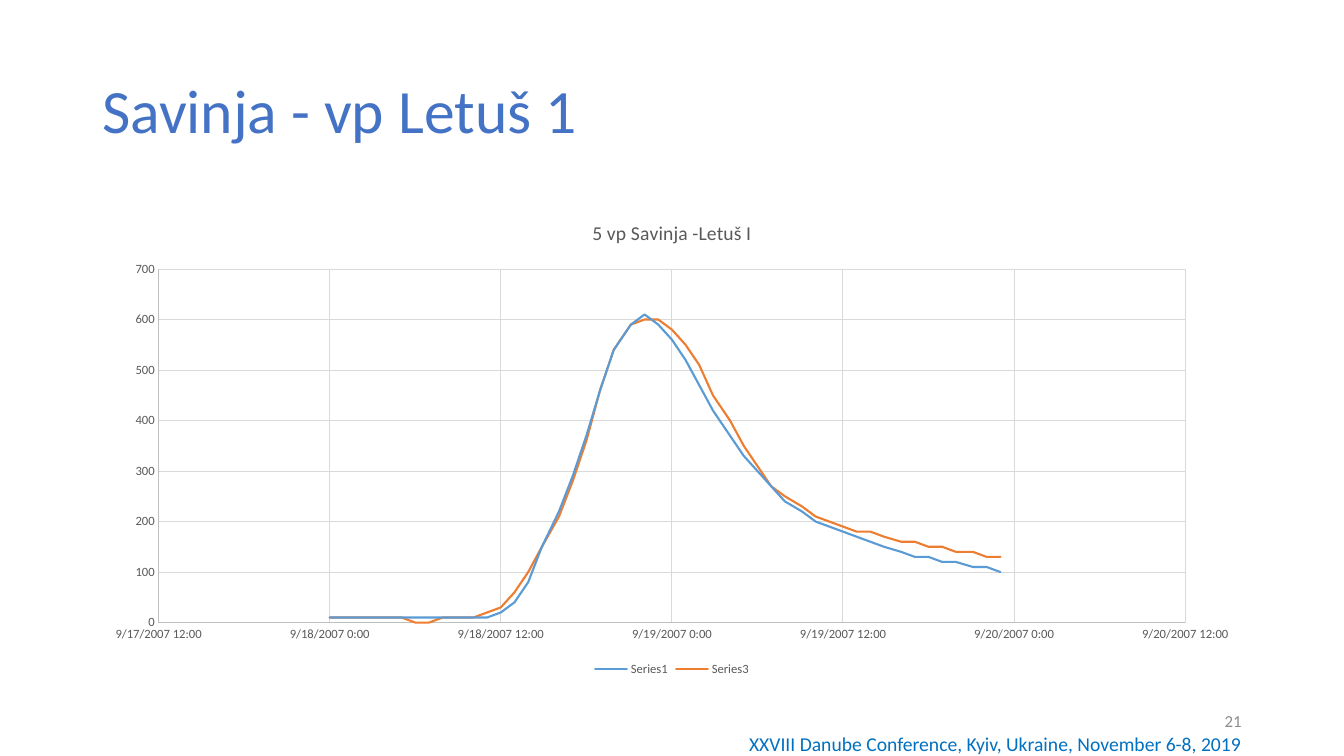
from dataclasses import dataclass

from pptx import Presentation
from pptx.chart.data import XyChartData
from pptx.dml.color import RGBColor
from pptx.enum.chart import XL_CHART_TYPE, XL_LEGEND_POSITION, XL_TICK_MARK
from pptx.enum.text import MSO_ANCHOR, PP_ALIGN
from pptx.util import Pt

LINES = XL_CHART_TYPE.XY_SCATTER_LINES_NO_MARKERS
LEGEND_BOTTOM = XL_LEGEND_POSITION.BOTTOM
NO_TICK = XL_TICK_MARK.NONE
MIDDLE, TOP = MSO_ANCHOR.MIDDLE, MSO_ANCHOR.TOP
LEFT, RIGHT = PP_ALIGN.LEFT, PP_ALIGN.RIGHT


@dataclass(frozen=True)
class Theme:
    font: str = "Calibri"
    heading: str = "4472C4"
    page_number: str = "8C8C8C"
    conference: str = "0070C0"
    chart_text: str = "595959"
    axis: str = "BFBFBF"
    grid: str = "D9D9D9"
    flows: tuple = ("5B9BD5", "ED7D31")
    heading_size: int = 44
    conference_size: int = 14
    chart_title_size: int = 14
    page_number_size: int = 12
    label_size: int = 9
    hairline: float = 0.75
    flow_line: float = 1.5


THEME = Theme()
FIRST_HOUR = 39343
AXIS_START, AXIS_END, HALF_DAY = 39342.5, 39345.5, 0.5
FLOWS = {
    "Series1": [10] * 12 + [
        20, 40, 80, 150, 220, 290, 370, 460, 540, 590, 610, 590,
        560, 520, 470, 420, 370, 330, 300, 270, 240, 220, 200, 190,
        180, 170, 160, 150, 140, 130, 130, 120, 120, 110, 110, 100],
    "Series3": [10] * 6 + [0, 0] + [10] * 3 + [
        20, 30, 60, 100, 150, 210, 280, 360, 460, 540, 590, 600, 600,
        580, 550, 510, 450, 400, 350, 310, 270, 250, 230, 210, 200,
        190, 180, 180, 170, 160, 160, 150, 150, 140, 140, 130, 130],
}


def style_font(font, size, color):
    font.name = THEME.font
    font.size = Pt(size)
    font.bold = False
    font.color.rgb = RGBColor.from_string(color)


def style_line(line, color, width):
    line.color.rgb = RGBColor.from_string(color)
    line.width = Pt(width)


def add_text(slide, box, text, size, color, align=LEFT, anchor=MIDDLE, spacing=1.0):
    frame = slide.shapes.add_textbox(*map(Pt, box)).text_frame
    frame.word_wrap = True
    frame.vertical_anchor = anchor
    frame.text = text
    paragraph = frame.paragraphs[0]
    paragraph.alignment = align
    paragraph.line_spacing = spacing
    style_font(paragraph.runs[0].font, size, color)


def style_axis(axis, low, high, step, number_format):
    axis.minimum_scale, axis.maximum_scale = low, high
    axis.major_unit = step
    axis.major_tick_mark = axis.minor_tick_mark = NO_TICK
    axis.has_major_gridlines = True
    style_line(axis.major_gridlines.format.line, THEME.grid, THEME.hairline)
    style_line(axis.format.line, THEME.axis, THEME.hairline)
    style_font(axis.tick_labels.font, THEME.label_size, THEME.chart_text)
    axis.tick_labels.number_format = number_format
    axis.tick_labels.number_format_is_linked = False


def add_hydrograph(slide, box, title):
    data = XyChartData()
    for name, discharges in FLOWS.items():
        flow = data.add_series(name)
        for hour, discharge in enumerate(discharges):
            flow.add_data_point(round(FIRST_HOUR + hour / 24, 2), discharge)
    chart = slide.shapes.add_chart(LINES, *map(Pt, box), data).chart
    style_font(chart.font, THEME.label_size, THEME.chart_text)

    chart.has_title = True
    heading = chart.chart_title.text_frame
    heading.text = title
    style_font(heading.paragraphs[0].runs[0].font,
               THEME.chart_title_size, THEME.chart_text)
    chart.chart_title.include_in_layout = False

    chart.has_legend = True
    chart.legend.position = LEGEND_BOTTOM
    chart.legend.include_in_layout = False
    style_font(chart.legend.font, THEME.label_size, THEME.chart_text)

    style_axis(chart.category_axis, AXIS_START, AXIS_END, HALF_DAY, "m/d/yyyy h:mm")
    style_axis(chart.value_axis, 0, 700, 100, "General")

    plot = chart.plots[0]
    plot.vary_by_categories = False
    for flow, color in zip(plot.series, THEME.flows):
        flow.smooth = False
        style_line(flow.format.line, color, THEME.flow_line)
        flow._element.xpath("c:spPr/a:ln")[0].set("cap", "rnd")


def main():
    deck = Presentation()
    deck.slide_width, deck.slide_height = Pt(960), Pt(540)
    slide = deck.slides.add_slide(deck.slide_layouts[6])

    add_text(slide, (66, 28.75, 828, 104.4), "Savinja - vp Letuš 1",
             THEME.heading_size, THEME.heading, spacing=0.9)
    add_text(slide, (678, 500.5, 216, 28.75), "21",
             THEME.page_number_size, THEME.page_number, RIGHT)
    add_hydrograph(slide, (66, 143.75, 828, 342.6), "5 vp Savinja -Letuš I")
    add_text(slide, (523, 519.1, 371, 41),
             "XXVIII Danube Conference, Kyiv, Ukraine, November 6-8, 2019",
             THEME.conference_size, THEME.conference, RIGHT, TOP)

    deck.save("out.pptx")


if __name__ == "__main__":
    main()
